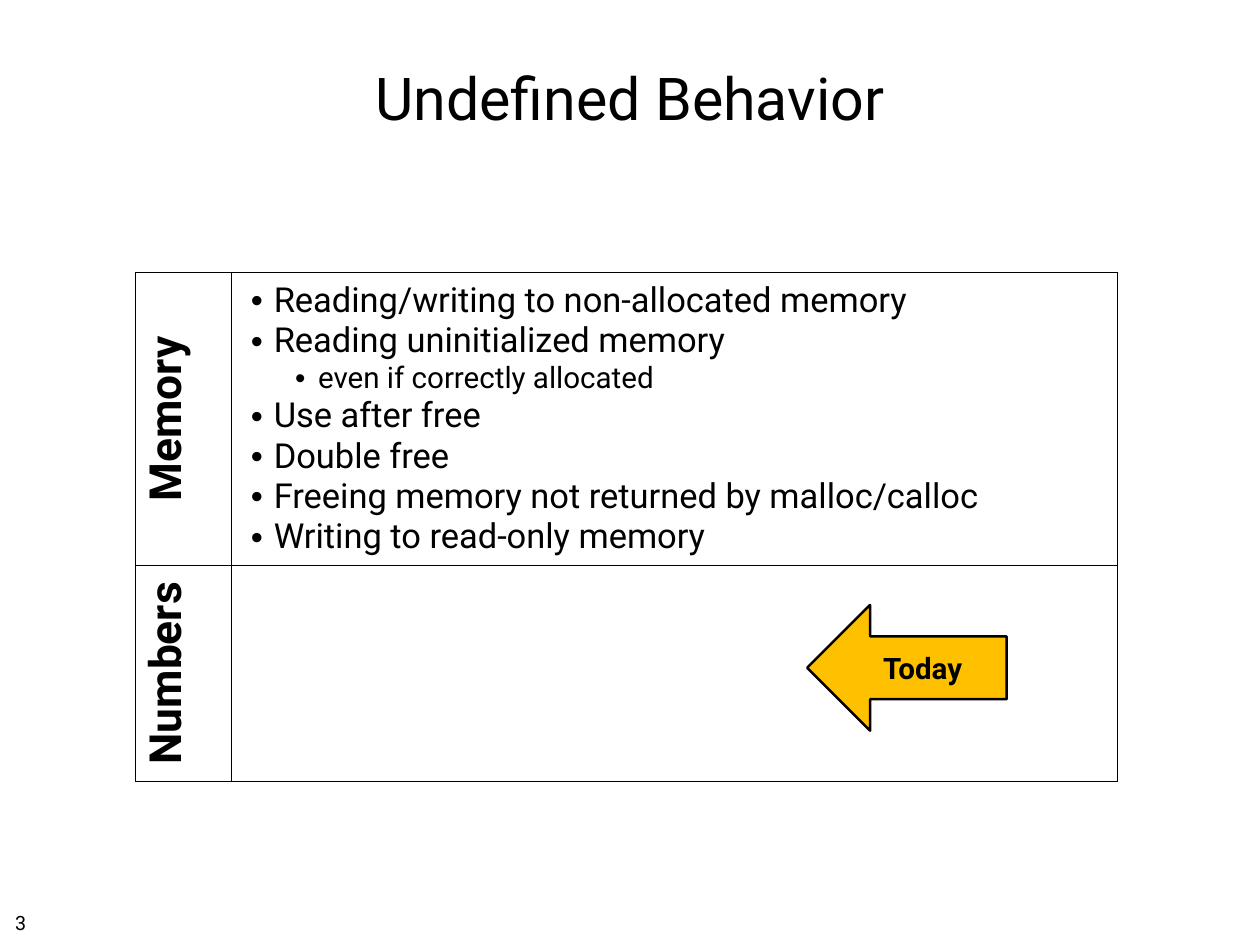
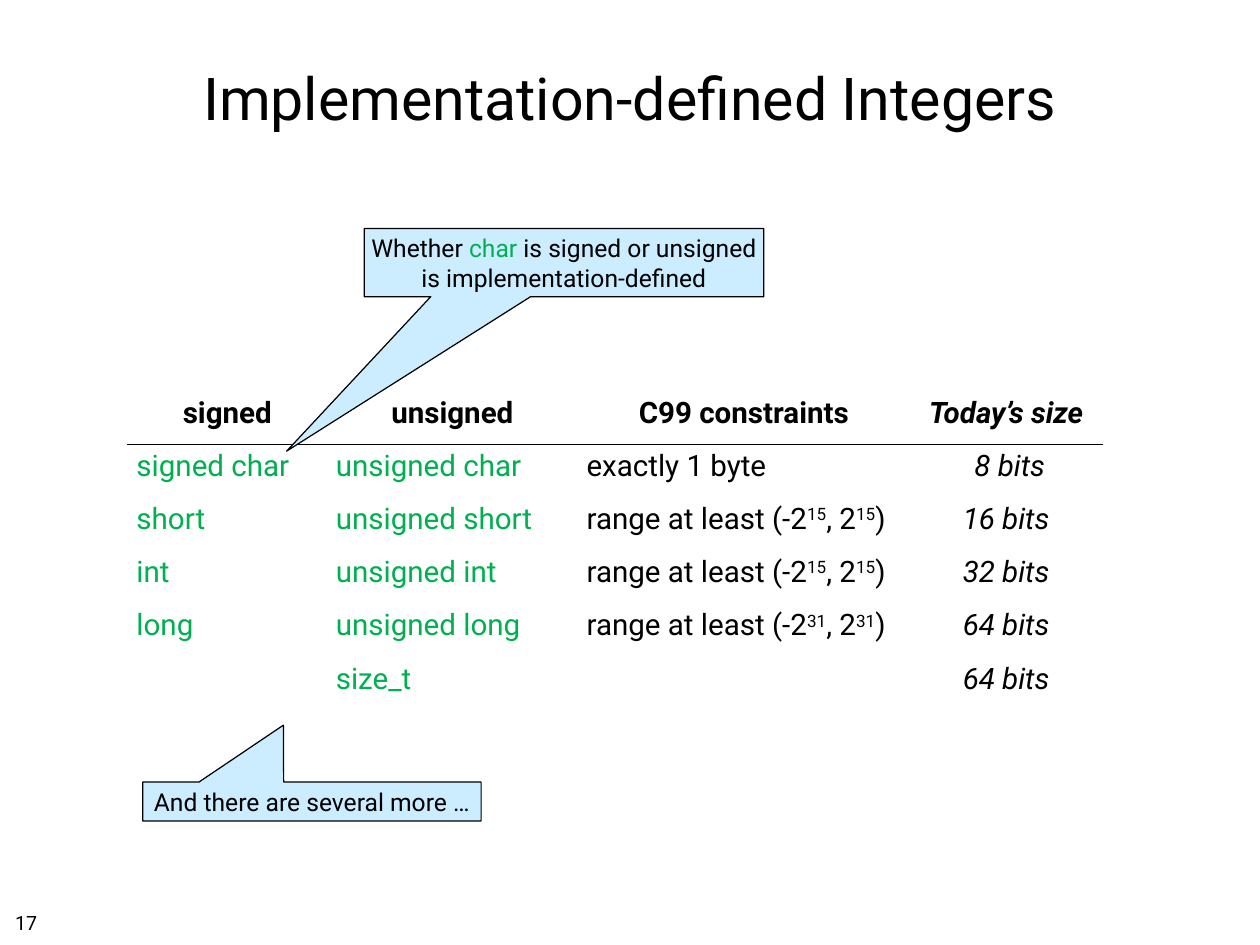
"""Build two slides on undefined and implementation-defined behavior in C."""
from lxml import etree
from pptx import Presentation
from pptx.dml.color import RGBColor
from pptx.enum.shapes import MSO_SHAPE as SHAPE
from pptx.enum.text import MSO_ANCHOR as ANCHOR, MSO_AUTO_SIZE as AUTO, PP_ALIGN as ALIGN
from pptx.oxml.ns import qn
from pptx.util import Inches, Pt

BLACK = RGBColor(0x00, 0x00, 0x00)
WHITE = RGBColor(0xFF, 0xFF, 0xFF)
GREEN = RGBColor(0x00, 0xB0, 0x50)
AMBER = RGBColor(0xFF, 0xC0, 0x00)
PALE_BLUE = RGBColor(0xCC, 0xEC, 0xFF)
FONT = "Roboto"
CODE = {"color": GREEN}
SUPER = {"baseline": 30000}


class Deck:
    """Hold the shared style and the current slide."""

    def __init__(self):
        self.prs = Presentation()
        self.prs.slide_width, self.prs.slide_height = Inches(14.22), Inches(10.67)

    def new_slide(self, title, number):
        self.s = self.prs.slides.add_slide(self.prs.slide_layouts[6])
        self.text_box((1.04, 0.28, 12.14, 1.64), title, 48, ALIGN.CENTER, ANCHOR.MIDDLE)
        self.text_box((0.11, 10.23, 0.37, 0.35), number, 16, wrap=False)

    def add_runs(self, p, runs, align=None, **base):
        p.alignment = align
        for text, extra in [(runs, {})] if isinstance(runs, str) else runs:
            fmt = {"name": FONT, "color": BLACK, **base, **extra}
            for i, line in enumerate(text.split("\n")):
                if i:
                    p.add_line_break()
                r = p.add_run()
                r.text = line
                for key, value in fmt.items():
                    if key == "color":
                        r.font.color.rgb = value
                    elif key == "baseline":
                        r._r.get_or_add_rPr().set(key, str(value))
                    else:
                        setattr(r.font, key, value)

    def frame(self, tf, inset, anchor, wrap):
        for side in ("left", "top", "right", "bottom"):
            setattr(tf, f"margin_{side}", Inches(inset))
        tf.vertical_anchor, tf.word_wrap = anchor, wrap

    def text_box(self, box, text, size, align=ALIGN.LEFT, anchor=ANCHOR.TOP, wrap=True):
        tf = self.s.shapes.add_textbox(*map(Inches, box)).text_frame
        self.frame(tf, 0.06, anchor, wrap)
        self.add_runs(tf.paragraphs[0], text, align, size=Pt(size))

    def shape(self, kind, box, fill, runs, size, line=1, inset=0.06, bold=False):
        sp = self.s.shapes.add_shape(kind, *map(Inches, box))
        sp.shadow.inherit = False
        sp.fill.solid()
        sp.fill.fore_color.rgb = fill
        sp.line.color.rgb, sp.line.width = BLACK, Pt(line)
        self.frame(sp.text_frame, inset, ANCHOR.MIDDLE, False)
        self.add_runs(sp.text_frame.paragraphs[0], runs, ALIGN.CENTER, size=Pt(size), bold=bold)
        return sp

    def callout(self, box, tip, runs):
        sp = self.shape(SHAPE.RECTANGULAR_CALLOUT, box, PALE_BLUE, runs, 20, inset=0.05)
        sp.text_frame.auto_size = AUTO.SHAPE_TO_FIT_TEXT
        sp.adjustments[0], sp.adjustments[1] = tip

    def table(self, left, top, cols, rows, border):
        box = map(Inches, (left, top, sum(cols), sum(rows)))
        tbl = self.s.shapes.add_table(len(rows), len(cols), *box).table
        tbl.first_row = tbl.horz_banding = False
        for col, width in zip(tbl.columns, cols):
            col.width = Inches(width)
        for row, height in zip(tbl.rows, rows):
            row.height = Inches(height)
        for cell in tbl.iter_cells():
            for side in "LRTB":
                self.border(cell, side, border)
            cell.fill.background()
        return tbl

    def border(self, cell, side, color):
        tc_pr = cell._tc.get_or_add_tcPr()
        tag = qn(f"a:ln{side}")
        ln = tc_pr.find(tag)
        if ln is None:
            ln = etree.SubElement(tc_pr, tag, w=str(Pt(1)))
            fill = etree.SubElement(ln, qn("a:solidFill"))
            etree.SubElement(fill, qn("a:srgbClr"))
        ln[0][0].set("val", str(color))

    def row_heading(self, cell, text):
        cell._tc.get_or_add_tcPr().set("vert", "vert270")
        cell.vertical_anchor = ANCHOR.MIDDLE
        self.add_runs(cell.text_frame.paragraphs[0], text, ALIGN.CENTER, size=Pt(36), bold=True)

    def bullets(self, cell, items):
        cell.vertical_anchor = ANCHOR.MIDDLE
        tf = cell.text_frame
        for i, (level, text) in enumerate(items):
            p = tf.add_paragraph() if i else tf.paragraphs[0]
            p.level = level
            p_pr = p._p.get_or_add_pPr()
            p_pr.set("marL", str(Inches(0.38 + 0.5 * level)))
            p_pr.set("indent", str(Inches(-0.26)))
            etree.SubElement(p_pr, qn("a:buFont"), typeface="Arial")
            etree.SubElement(p_pr, qn("a:buChar"), char="•")
            self.add_runs(p, text, size=Pt(28 - 4 * level))


def power_range(exponent):
    return [("range at least (-2", {}), (exponent, SUPER), (", 2", {}), (exponent, SUPER), (")", {})]


def undefined_behavior(deck):
    deck.new_slide("Undefined Behavior", "3")
    tbl = deck.table(1.53, 3.08, [1.08, 10], [3.06, 2.44], BLACK)
    for row, heading in enumerate(["Memory", "Numbers"]):
        deck.row_heading(tbl.cell(row, 0), heading)
    deck.bullets(tbl.cell(0, 1), [
        (0, "Reading/writing to non-allocated memory"),
        (0, "Reading uninitialized memory"),
        (1, "even if correctly allocated"),
        (0, "Use after free"),
        (0, "Double free"),
        (0, "Freeing memory not returned by malloc/calloc"),
        (0, "Writing to read-only memory"),
    ])
    deck.shape(SHAPE.LEFT_ARROW, (9.11, 6.83, 2.25, 1.42), AMBER, "Today", 24, line=2, bold=True)


def implementation_defined(deck):
    deck.new_slide("Implementation-defined Integers", "17")
    rows = [
        ("signed", "unsigned", "C99 constraints", "Today’s size"),
        ("signed char", "unsigned char", "exactly 1 byte", " 8 bits"),
        ("short", "unsigned short", power_range("15"), "16 bits"),
        ("int", "unsigned int", power_range("15"), "32 bits"),
        ("long", "unsigned long", power_range("31"), "64 bits"),
        ("", "size_t", "", "64 bits"),
    ]
    tbl = deck.table(1.44, 4.42, [2.25, 2.83, 3.75, 2.17], [0.6] * len(rows), WHITE)
    for i, row in enumerate(rows):
        for j, runs in enumerate(row):
            cell = tbl.cell(i, j)
            if i < 2:
                deck.border(cell, "T" if i else "B", BLACK)
            if runs:
                align = ALIGN.CENTER if i == 0 or j == 3 else ALIGN.LEFT
                color = GREEN if i and j < 2 else BLACK
                deck.add_runs(cell.text_frame.paragraphs[0], runs, align,
                              size=Pt(24), bold=i == 0, italic=j == 3, color=color)
    deck.callout((1.61, 8.83, 3.82, 0.44), (-0.084, -1.959), "And there are several more …")
    deck.callout((4.11, 2.58, 4.51, 0.77), (-0.694, 2.765), [
        ("Whether ", {}), ("char", CODE),
        (" is signed or unsigned\nis implementation-defined", {})])


def main():
    deck = Deck()
    undefined_behavior(deck)
    implementation_defined(deck)
    deck.prs.save("out.pptx")


if __name__ == "__main__":
    main()
